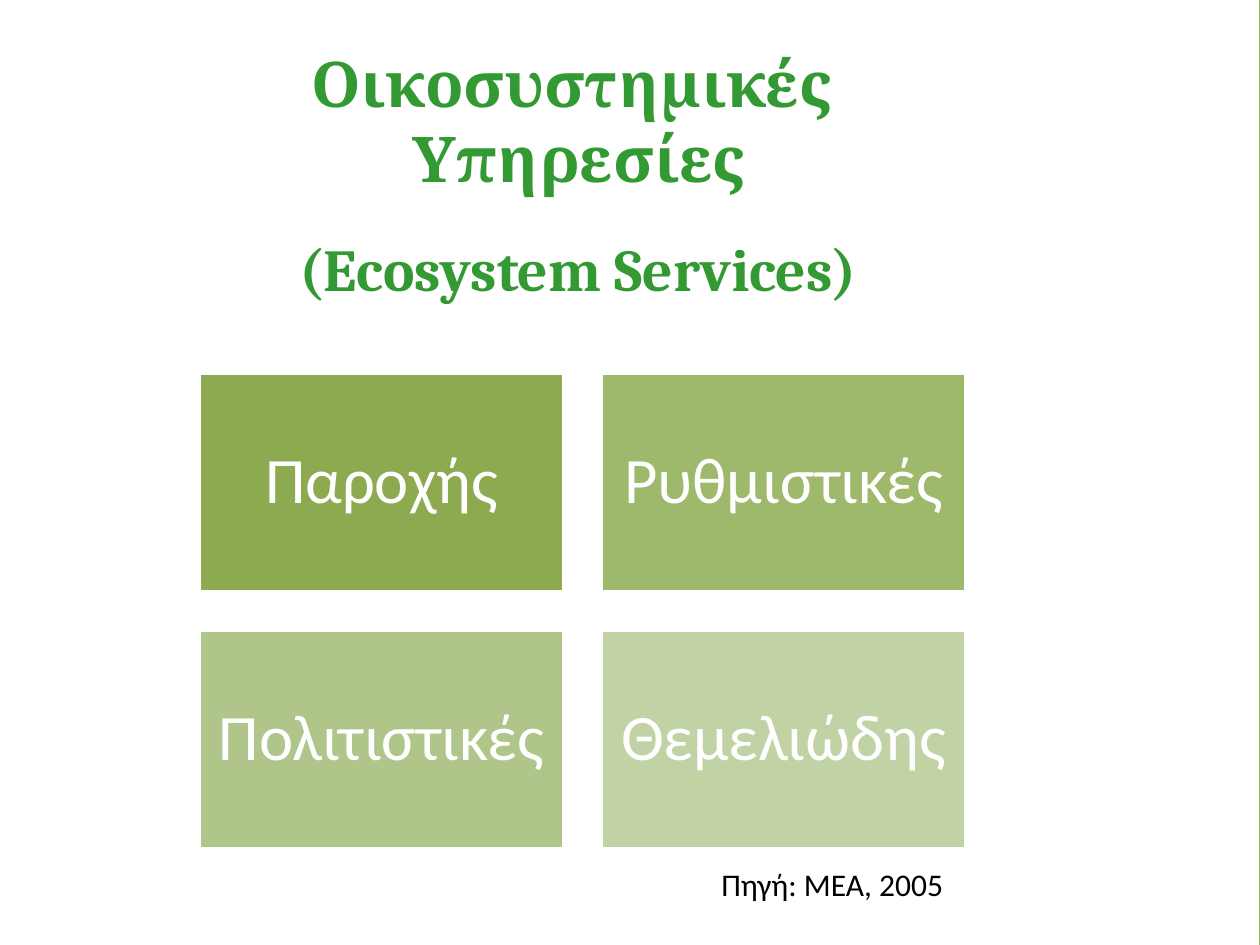
"""Build the ecosystem services slide."""
from pptx import Presentation
from pptx import util as u
from pptx.dml.color import RGBColor
from pptx.enum import shapes, text

SCALE = 914400 / 126
COLORS = {
    "paper": "FFFFFF", "edge": "98B955", "title": "339933", "ink": "000000",
    "provisioning": "8DAA51", "regulating": "9EB86C",
    "cultural": "AFC589", "supporting": "C1D3A5",
}
TILES = [
    ("Παροχής", "provisioning"), ("Ρυθμιστικές", "regulating"),
    ("Πολιτιστικές", "cultural"), ("Θεμελιώδης", "supporting"),
]


class Painter:
    """Holds the style and the current slide."""

    def __init__(self, slide):
        self.slide = slide

    def color(self, name):
        return RGBColor.from_string(COLORS[name])

    def place(self, *lengths):
        return [u.Emu(round(length * SCALE)) for length in lengths]

    def panel(self, left, top, width, height, fill, line, weight):
        panel = self.slide.shapes.add_shape(
            shapes.MSO_SHAPE.RECTANGLE, *self.place(left, top, width, height))
        panel.shadow.inherit = False
        panel.fill.solid()
        panel.fill.fore_color.rgb = self.color(fill)
        panel.line.color.rgb = self.color(line)
        panel.line.width = u.Pt(weight)
        return panel

    def fill_para(self, para, words, font, size, color, bold=False):
        para.text = words
        para.font.name = font
        para.font.size = u.Pt(size)
        para.font.bold = bold
        para.font.color.rgb = self.color(color)

    def tile(self, left, top, width, height, words, fill):
        tile = self.panel(left, top, width, height, fill, "paper", 2)
        frame = tile.text_frame
        frame.word_wrap = True
        frame.vertical_anchor = text.MSO_ANCHOR.MIDDLE
        frame.margin_left = frame.margin_right = u.Inches(0.15)
        frame.margin_top = frame.margin_bottom = u.Inches(0.15)
        para = frame.paragraphs[0]
        para.alignment = text.PP_ALIGN.CENTER
        para.line_spacing = 0.9
        self.fill_para(para, words, "Calibri", 37, "paper")

    def textbox(self, left, top, width, height):
        box = self.slide.shapes.add_textbox(*self.place(left, top, width, height))
        box.text_frame.word_wrap = True
        return box.text_frame

    def title(self, left, top, width, height, lines):
        frame = self.textbox(left, top, width, height)
        for index, (words, size, gap) in enumerate(lines):
            para = frame.add_paragraph() if index else frame.paragraphs[0]
            para.alignment = text.PP_ALIGN.CENTER
            if gap:
                para.space_before = u.Pt(gap)
            self.fill_para(para, words, "Cambria", size, "title", bold=True)

    def source(self, left, top, width, height, words):
        frame = self.textbox(left, top, width, height)
        self.fill_para(frame.paragraphs[0], words, "Calibri", 18, "ink")


def main():
    deck = Presentation()
    deck.slide_width, deck.slide_height = u.Inches(10), u.Inches(7.5)
    painter = Painter(deck.slides.add_slide(deck.slide_layouts[6]))
    painter.panel(-105, -14, 1365, 979, "paper", "edge", 0.75)
    painter.title(-105, 38, 1367, 276, [
        ("Οικοσυστημικές ", 36, 0),
        ("Υπηρεσίες", 36, 0),
        ("(Ecosystem Services)", 34, 21),
    ])
    painter.source(709, 859, 640, 50, "Πηγή: ΜΕΑ, 2005")
    for index, (words, fill) in enumerate(TILES):
        row, column = divmod(index, 2)
        painter.tile(199 + 402 * column, 373 + 257 * row, 365, 219, words, fill)
    deck.save("out.pptx")


if __name__ == "__main__":
    main()
